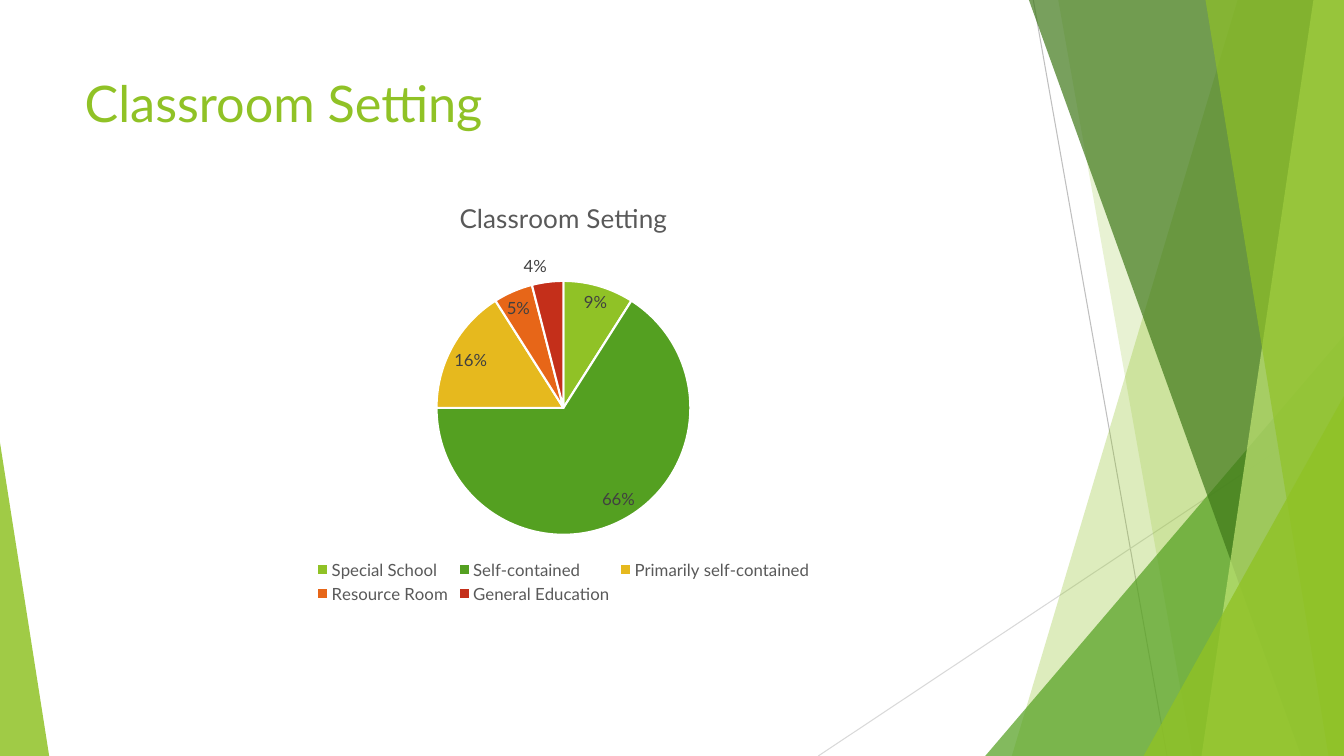
from pptx import Presentation
from pptx.chart.data import CategoryChartData as Data
from pptx.dml.color import RGBColor as RGB
from pptx.enum.chart import XL_CHART_TYPE as Kind, XL_LABEL_POSITION as Spot, XL_LEGEND_POSITION as Side
from pptx.enum.shapes import MSO_CONNECTOR as Link, MSO_SHAPE as Shape
from pptx.enum.text import MSO_ANCHOR as Anchor, MSO_AUTO_SIZE as Fit, PP_ALIGN as Align
from pptx.oxml.ns import qn
from pptx.util import Cm, Pt
from lxml.etree import SubElement as Sub

WIDE, HIGH = 33.87, 19.05
FONT = "Lato"
HUES = {
    "lime": "90C226", "green": "54A021", "gold": "E6B91E", "orange": "E76618",
    "red": "C42F1A", "dark": "3F7819", "pale": "C0E474", "white": "FFFFFF",
    "text": "595959", "label": "404040", "line": "BFBFBF", "faint": "D9D9D9",
}
SHARES = [
    ("Special School", 9, "lime"),
    ("Self-contained", 66, "green"),
    ("Primarily self-contained", 16, "gold"),
    ("Resource Room", 5, "orange"),
    ("General Education", 4, "red"),
]


def hue(name):
    return RGB.from_string(HUES[name])


def style(font, size, color):
    font.name, font.size, font.bold = FONT, Pt(size), False
    font.color.rgb = hue(color)


def paint(shape, color, alpha):
    """Fill a shape with a see-through colour, without outline or shadow."""
    shape.shadow.inherit = False
    shape.line.fill.background()
    shape.fill.solid()
    shape.fill.fore_color.rgb = hue(color)
    tint = shape.fill._xPr.find(qn("a:solidFill"))[0]
    Sub(tint, qn("a:alpha")).set("val", str(alpha * 1000))


def ray(slide, start, end, color):
    line = slide.shapes.add_connector(Link.STRAIGHT, *map(Cm, start + end))
    line.line.color.rgb = hue(color)
    line.line.width = Pt(0.75)
    Sub(line._element.spPr, qn("a:effectLst"))


def band(slide, box, top, foot, color, alpha):
    """Draw a slanted band that reaches the right edge of the box."""
    x, y, w, h = box
    pen = slide.shapes.build_freeform(Cm(x + top), Cm(y))
    ends = [(x + w, y), (x + w, y + h), (x + foot, y + h)]
    pen.add_line_segments([(Cm(a), Cm(b)) for a, b in ends])
    paint(pen.convert_to_shape(), color, alpha)


def wedge(slide, box, peak, color, alpha):
    """Draw a triangle with its peak at the left (0) or right (1)."""
    shape = slide.shapes.add_shape(Shape.ISOSCELES_TRIANGLE, *map(Cm, box))
    shape.adjustments[0] = peak
    paint(shape, color, alpha)


def decor(slide, box):
    x, y, w, h = box
    right, foot = x + w, y + h

    def corner(wide, high, color, alpha):
        wedge(slide, (right - wide, foot - high, wide, high), 1, color, alpha)

    # Thin lines
    ray(slide, (x + 5.42, y), (x + 8.79, foot), "line")
    ray(slide, (right, y + 10.24), (x, foot), "faint")
    # Bands and wedges on the right, back to front
    band(slide, box, 10.57, 4.88, "lime", 30)
    band(slide, box, 6.05, 9.43, "lime", 20)
    corner(9.04, 10.59, "green", 72)
    band(slide, box, 5.31, 12.17, "dark", 70)
    band(slide, box, 12.48, 9.66, "pale", 70)
    band(slide, box, 9.76, 12.86, "lime", 65)
    corner(5.05, 9.07, "lime", 80)


def title(slide, box, words):
    head = slide.shapes.title
    head.left, head.top, head.width, head.height = map(Cm, box)
    frame = head.text_frame
    frame.word_wrap, frame.auto_size = True, Fit.NONE
    frame.vertical_anchor = Anchor.TOP
    para = frame.paragraphs[0]
    para.alignment = Align.LEFT
    run = para.add_run()
    run.text = words
    style(run.font, 36, "lime")


def pie(slide, box, words):
    data = Data()
    data.categories = [name for name, _, _ in SHARES]
    data.add_series(words, [share for _, share, _ in SHARES])
    chart = slide.shapes.add_chart(Kind.PIE, *map(Cm, box), data).chart
    chart.font.name, chart.font.size = FONT, Pt(10)

    # Heading and legend
    chart.has_title = True
    run = chart.chart_title.text_frame.paragraphs[0].add_run()
    run.text = words
    style(run.font, 18.6, "text")
    chart.has_legend = True
    chart.legend.position = Side.BOTTOM
    chart.legend.include_in_layout = False
    style(chart.legend.font, 12, "text")

    # Slices and their labels
    plot = chart.plots[0]
    plot.vary_by_categories = True
    for i, (_, _, color) in enumerate(SHARES):
        slice_ = plot.series[0].points[i].format
        slice_.fill.solid()
        slice_.fill.fore_color.rgb = hue(color)
        slice_.line.color.rgb = hue("white")
        slice_.line.width = Pt(1.5)
    plot.has_data_labels = True
    labels = plot.data_labels
    labels.show_percentage, labels.show_value = True, False
    labels.number_format, labels.number_format_is_linked = "0%", False
    labels.position = Spot.BEST_FIT
    style(labels.font, 12, "label")


def main():
    deck = Presentation()
    deck.slide_width, deck.slide_height = Cm(WIDE), Cm(HIGH)
    slide = deck.slides.add_slide(deck.slide_layouts[5])
    decor(slide, (20.62, 0, WIDE - 20.62, HIGH))
    wedge(slide, (0, HIGH - 7.9, 1.24, 7.9), 0, "lime", 85)
    title(slide, (1.88, 1.7, 23.88, 3.66), "Classroom Setting")
    pie(slide, (2.26, 4.55, 23.88, 10.77), "Classroom Setting")
    deck.save("out.pptx")


if __name__ == "__main__":
    main()
